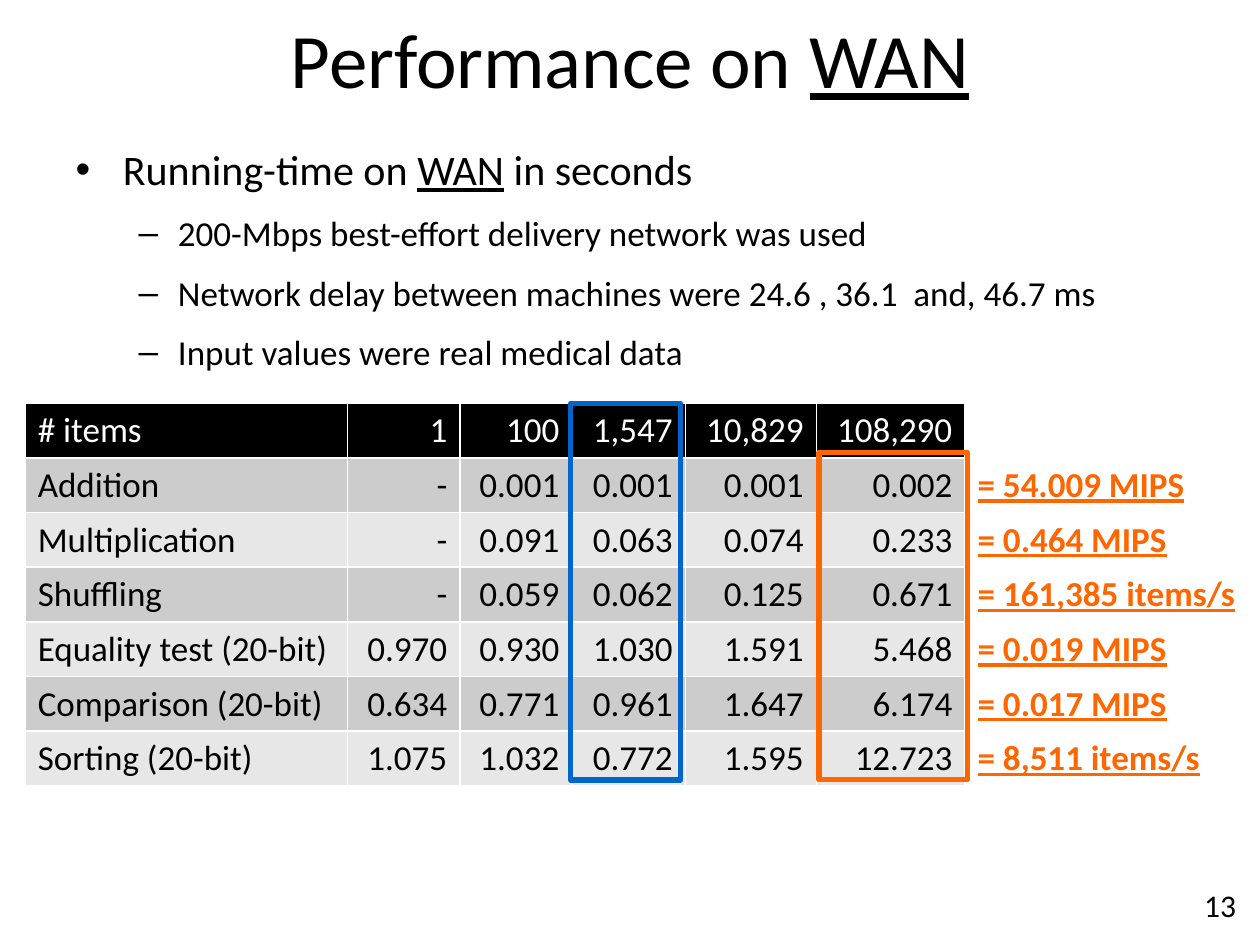
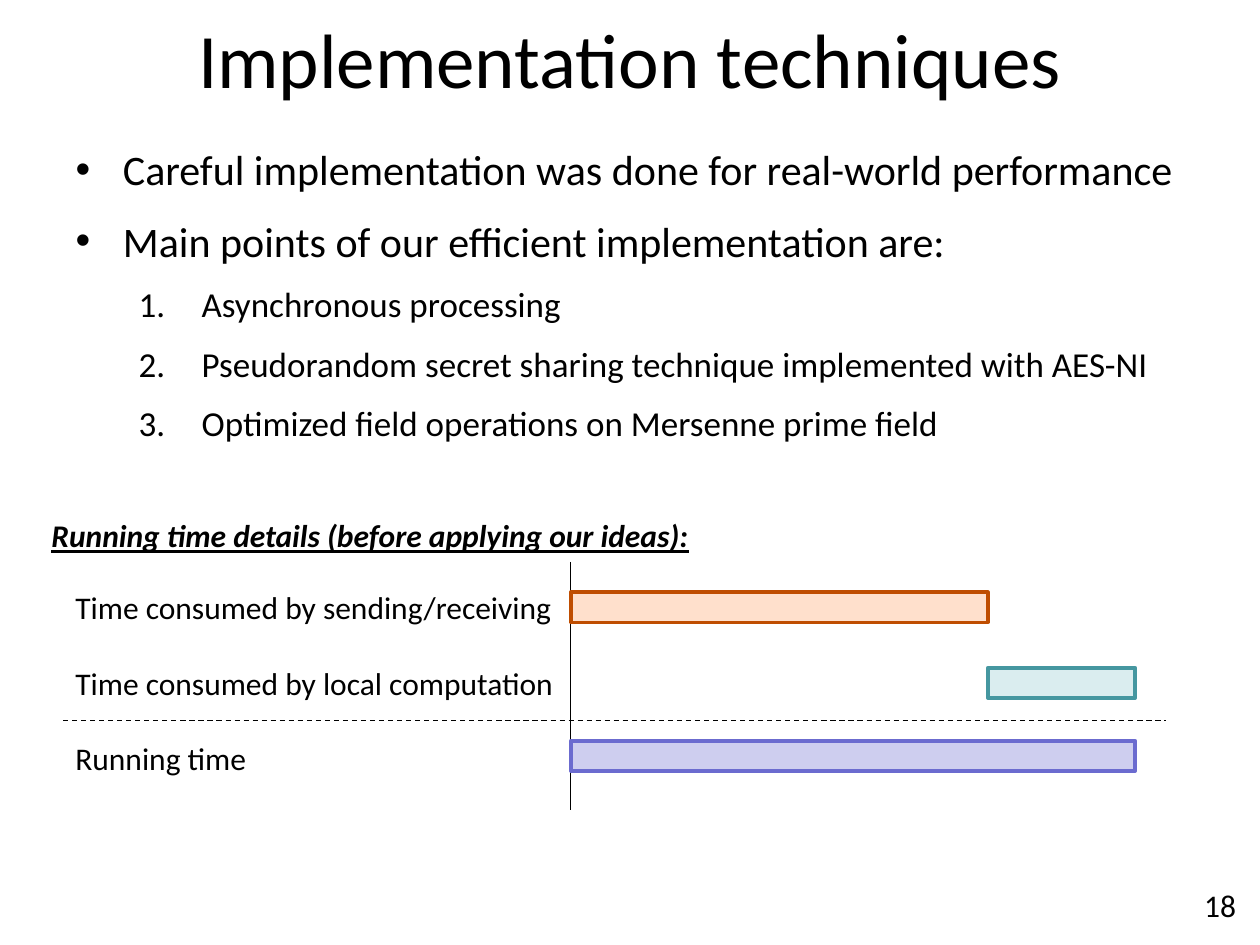
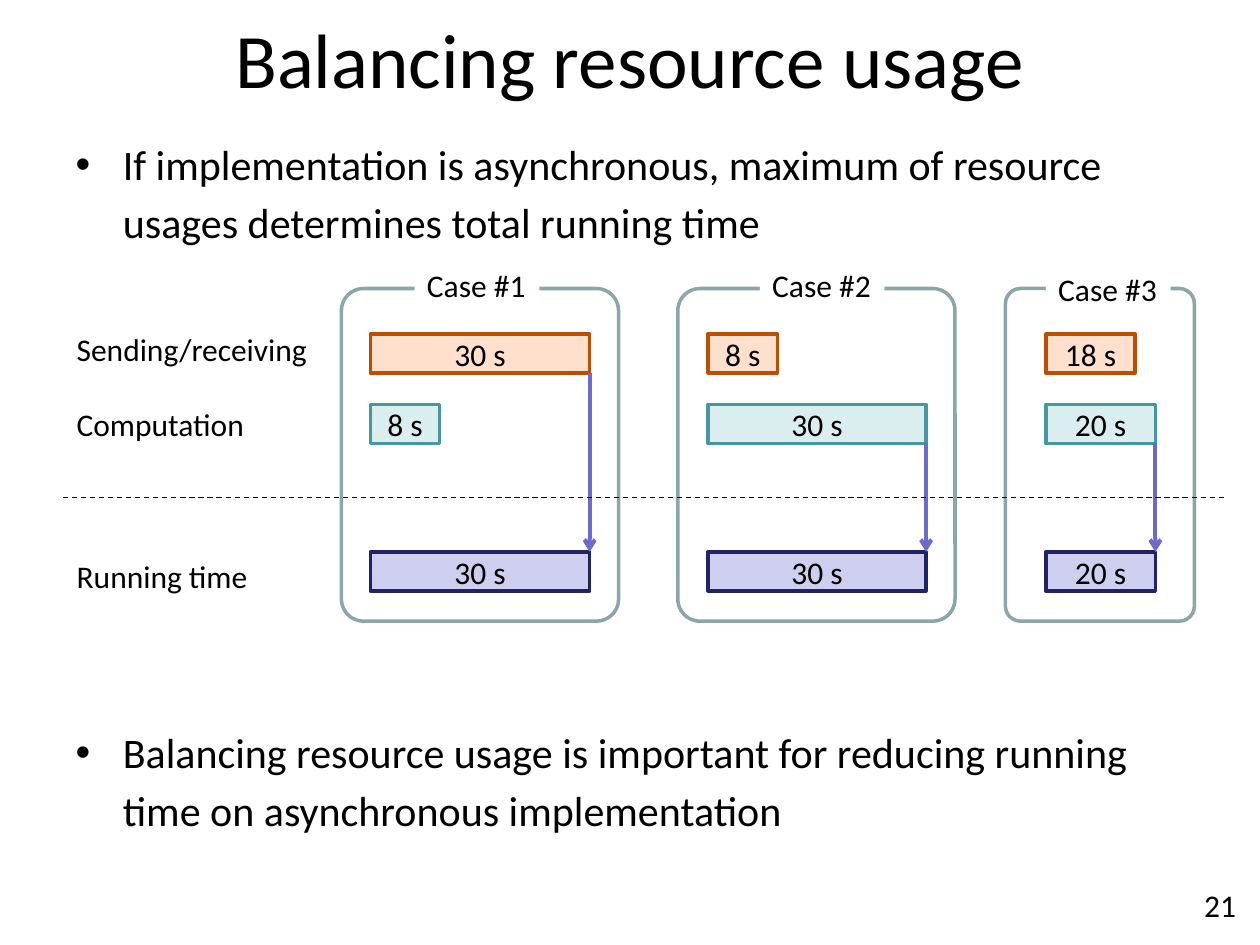
import dataclasses

import lxml.etree
import pptx
import pptx.dml.color
import pptx.enum.dml
import pptx.enum.shapes
import pptx.enum.text
import pptx.oxml.ns
import pptx.util

RGB = pptx.dml.color.RGBColor
SHAPE = pptx.enum.shapes.MSO_SHAPE
ALIGN = pptx.enum.text.PP_ALIGN
ANCHOR = pptx.enum.text.MSO_ANCHOR

BLACK = RGB(0x00, 0x00, 0x00)
WHITE = RGB(0xFF, 0xFF, 0xFF)
BAND_DARK = RGB(0xCC, 0xCC, 0xCC)
BAND_LIGHT = RGB(0xE7, 0xE7, 0xE7)
ORANGE = RGB(0xFF, 0x66, 0x00)
BLUE = RGB(0x00, 0x66, 0xCC)
NETWORK = RGB(0xFF, 0xE0, 0xCC)
NETWORK_EDGE = RGB(0xBF, 0x4D, 0x00)
COMPUTE = RGB(0xDA, 0xED, 0xEF)
COMPUTE_EDGE = RGB(0x45, 0x97, 0xA0)
TOTAL = RGB(0xCE, 0xCE, 0xEF)
TOTAL_EDGE = RGB(0x6B, 0x6B, 0xCF)
TOTAL_EDGE_DARK = RGB(0x22, 0x22, 0x67)
FRAME = RGB(0x8A, 0xA6, 0xA8)

FONT = "Calibri"
TITLE_SIZE, LABEL_SIZE, TABLE_SIZE = 44, 18, 20
LEVEL_SIZES = (24, 20)
EMPHASIS = {"bold": True, "underline": True}

SLIDE_W, SLIDE_H = pptx.util.Inches(10), pptx.util.Inches(7.5)
GRID_COLUMNS, GRID_ROWS = 100, 75


def across(columns):
    return round(SLIDE_W * columns / GRID_COLUMNS)


def down(rows):
    return round(SLIDE_H * rows / GRID_ROWS)


@dataclasses.dataclass
class Box:
    """A region in grid columns and rows."""
    left: float
    top: float
    width: float
    height: float

    def area(self, left, top, width, height):
        return Box(self.left + left, self.top + top, width, height)

    def lengths(self):
        return across(self.left), down(self.top), across(self.width), down(self.height)


SLIDE = Box(0, 0, GRID_COLUMNS, GRID_ROWS)
TITLE_BOX = SLIDE.area(0, 0, 100, 9.2)
BODY_BOX = SLIDE.area(5, 9.9, 90, 59.1)
NUMBER_BOX = SLIDE.area(94.1, 69.8, 5, 4)


def set_format(target, values):
    for name, value in values.items():
        setattr(target, name, value)


def add_run(paragraph, text, size, color=BLACK, **style):
    run = paragraph.add_run()
    run.text = text
    set_format(run.font, {"name": FONT, "size": pptx.util.Pt(size), **style})
    run.font.color.rgb = color


def add_label(slide, box, lines, gaps=(0,), align=ALIGN.LEFT, **style):
    """Unwrapped text, with one space before each line, in points."""
    label = slide.shapes.add_textbox(*box.lengths())
    label.text_frame.word_wrap = False
    for index, (line, gap) in enumerate(zip(lines, gaps)):
        paragraph = label.text_frame.paragraphs[0] if index == 0 else label.text_frame.add_paragraph()
        set_format(paragraph, {"alignment": align, "space_before": pptx.util.Pt(gap)})
        add_run(paragraph, line, LABEL_SIZE, **style)
    return label


def add_block(slide, box, fill=None, edge=None, edge_width=2, text=None, kind=SHAPE.RECTANGLE):
    block = slide.shapes.add_shape(kind, *box.lengths())
    block.shadow.inherit = False
    if fill is None:
        block.fill.background()
    else:
        block.fill.solid()
        block.fill.fore_color.rgb = fill
    if edge is None:
        block.line.fill.background()
    else:
        block.line.color.rgb = edge
        block.line.width = pptx.util.Pt(edge_width)
    if text:
        set_format(block.text_frame, {"word_wrap": False, "vertical_anchor": ANCHOR.MIDDLE})
        paragraph = block.text_frame.paragraphs[0]
        paragraph.alignment = ALIGN.CENTER
        add_run(paragraph, text, LABEL_SIZE)
    return block


def add_line(slide, box, color=BLACK, width=0.75, dashed=False, arrow=False):
    """A straight line from the top left to the bottom right of the box."""
    left, top, wide, high = box.lengths()
    line = slide.shapes.add_connector(
        pptx.enum.shapes.MSO_CONNECTOR.STRAIGHT, left, top, left + wide, top + high)
    line.line.color.rgb = color
    line.line.width = pptx.util.Pt(width)
    if dashed:
        line.line.dash_style = pptx.enum.dml.MSO_LINE.DASH
    properties = line._element.spPr
    if arrow:
        outline = properties.find(pptx.oxml.ns.qn("a:ln"))
        lxml.etree.SubElement(outline, pptx.oxml.ns.qn("a:tailEnd"), type="arrow")
    lxml.etree.SubElement(properties, pptx.oxml.ns.qn("a:effectLst"))


def place_layout(layout):
    for placeholder, box in zip(layout.placeholders, (TITLE_BOX, BODY_BOX)):
        names = ("left", "top", "width", "height")
        set_format(placeholder, dict(zip(names, box.lengths())))


def add_slide(deck, number, title):
    slide = deck.slides.add_slide(deck.slide_layouts[1])
    heading = slide.shapes.title.text_frame
    set_format(heading, {"auto_size": pptx.enum.text.MSO_AUTO_SIZE.NONE,
                         "vertical_anchor": ANCHOR.MIDDLE})
    heading.paragraphs[0].alignment = ALIGN.CENTER
    for text, style in title:
        add_run(heading.paragraphs[0], text, TITLE_SIZE, **style)
    add_label(slide, NUMBER_BOX, [str(number)], align=ALIGN.RIGHT)
    return slide


def number_paragraph(paragraph):
    properties = paragraph._p.get_or_add_pPr()
    properties.set("marL", str(across(10)))
    properties.set("indent", str(-across(5)))
    lxml.etree.SubElement(properties, pptx.oxml.ns.qn("a:buAutoNum"), type="arabicPeriod")


def fill_body(slide, items, line_spacing=1.25, numbered_level=None):
    """Each item is its level and its runs of (text, style)."""
    body = slide.placeholders[1].text_frame
    body.auto_size = pptx.enum.text.MSO_AUTO_SIZE.NONE
    for index, (level, runs) in enumerate(items):
        paragraph = body.paragraphs[0] if index == 0 else body.add_paragraph()
        set_format(paragraph, {"level": level, "line_spacing": line_spacing})
        if level == numbered_level:
            number_paragraph(paragraph)
        for text, style in runs:
            add_run(paragraph, text, LEVEL_SIZES[level], **style)
    return body


TIMINGS = [
    ("# items", "1", "100", "1,547", "10,829", "108,290", ""),
    ("Addition", "-", "0.001", "0.001", "0.001", "0.002", "= 54.009 MIPS"),
    ("Multiplication", "-", "0.091", "0.063", "0.074", "0.233", "= 0.464 MIPS"),
    ("Shuffling", "-", "0.059", "0.062", "0.125", "0.671", "= 161,385 items/s"),
    ("Equality test (20-bit)", "0.970", "0.930", "1.030", "1.591", "5.468", "= 0.019 MIPS"),
    ("Comparison (20-bit)", "0.634", "0.771", "0.961", "1.647", "6.174", "= 0.017 MIPS"),
    ("Sorting (20-bit)", "1.075", "1.032", "0.772", "1.595", "12.723", "= 8,511 items/s"),
]
TIMING_COLUMNS = (25.6, 8.9, 8.9, 9, 10.4, 11.8, 23)


def add_timings(slide, box):
    table = slide.shapes.add_table(len(TIMINGS), len(TIMING_COLUMNS), *box.lengths()).table
    for column, width in zip(table.columns, TIMING_COLUMNS):
        column.width = across(width)
    rate_column = len(TIMING_COLUMNS) - 1
    for row, values in enumerate(TIMINGS):
        band = BLACK if row == 0 else (BAND_LIGHT, BAND_DARK)[row % 2]
        for column, value in enumerate(values):
            cell = table.cell(row, column)
            is_rate = column == rate_column
            if is_rate:
                cell.fill.background()
            else:
                cell.fill.solid()
                cell.fill.fore_color.rgb = band
            if not value:
                continue
            paragraph = cell.text_frame.paragraphs[0]
            paragraph.alignment = ALIGN.RIGHT if 0 < column < rate_column else ALIGN.LEFT
            color = ORANGE if is_rate else WHITE if row == 0 else BLACK
            add_run(paragraph, value, TABLE_SIZE, color, **(EMPHASIS if is_rate else {"bold": False}))
    add_block(slide, box.area(63, 3.9, 11.8, 26), edge=ORANGE, edge_width=3)
    add_block(slide, box.area(43.3, 0, 8.7, 29.9), edge=BLUE, edge_width=3)


def build_performance(deck):
    underlined = {"underline": True}
    slide = add_slide(deck, 13, [("Performance on ", {}), ("WAN", underlined)])
    fill_body(slide, [
        (0, [("Running-time on ", {}), ("WAN", underlined), (" in seconds", {})]),
        (1, [("200-Mbps best-effort delivery network was used", {})]),
        (1, [("Network delay between machines were 24.6 , 36.1  and, 46.7 ms", {})]),
        (1, [("Input values were real medical data", {})]),
    ])
    add_timings(slide, SLIDE.area(2, 32, sum(TIMING_COLUMNS), 30.3))


def add_time_details(slide, box):
    add_label(slide, box.area(1.9, 5.7, 40.3, 16.2),
              ["Time consumed by sending/receiving", "Time consumed by local computation",
               "Running time"], gaps=(0, 21.5, 21.5))
    axis, sending, computing = 42.2, 33.1, 11.7
    add_line(slide, box.area(axis, 4.1, 0, 19.7))
    for left, top, width, fill, edge in (
            (axis, 6.5, sending, NETWORK, NETWORK_EDGE),
            (axis + sending, 12.5, computing, COMPUTE, COMPUTE_EDGE),
            (axis, 18.3, sending + computing, TOTAL, TOTAL_EDGE)):
        add_block(slide, box.area(left, top, width, 2.4), fill, edge)
    add_label(slide, box.area(0, 0, 52.8, 4),
              ["Running time details (before applying our ideas):"], italic=True, **EMPHASIS)
    add_line(slide, box.area(1.9, 16.7, 87.5, 0), dashed=True)


def build_techniques(deck):
    slide = add_slide(deck, 18, [("Implementation techniques", {})])
    fill_body(slide, [
        (0, [("Careful implementation was done for real-world performance", {})]),
        (0, [("Main points of our efficient implementation are:", {})]),
        (1, [("Asynchronous processing", {})]),
        (1, [("Pseudorandom secret sharing technique implemented with AES-NI", {})]),
        (1, [("Optimized field operations on Mersenne prime field", {})]),
    ], numbered_level=1)
    add_time_details(slide, SLIDE.area(3.1, 40.5, 89.4, 23.8))


@dataclasses.dataclass
class Case:
    """Seconds and bar widths are for sending, then for computation."""
    name: str
    left: float
    width: float
    bars_left: float
    seconds: tuple
    bar_widths: tuple
    name_left: float
    name_top: float


CASES = [
    Case("Case #1", 22.1, 22, 2.3, (30, 8), (17.4, 5.5), 5.8, -2.3),
    Case("Case #2", 48.8, 22, 2.4, (8, 30), (5.5, 17.3), 6.5, -2.3),
    Case("Case #3", 74.8, 15, 3.2, (18, 20), (7.1, 8.7), 3.2, -2),
]
BAR_HEIGHT, TOTAL_TOP = 3.1, 20.9
RESOURCES = [(3.6, NETWORK, NETWORK_EDGE), (9.2, COMPUTE, COMPUTE_EDGE)]


def add_case(slide, box, case):
    for (top, fill, edge), seconds, width in zip(RESOURCES, case.seconds, case.bar_widths):
        add_block(slide, box.area(case.bars_left, top, width, BAR_HEIGHT), fill, edge,
                  text=f"{seconds} s")
    longest = max(case.seconds)
    slowest = case.seconds.index(longest)
    width = case.bar_widths[slowest]
    add_block(slide, box.area(case.bars_left, TOTAL_TOP, width, BAR_HEIGHT), TOTAL,
              TOTAL_EDGE_DARK, text=f"{longest} s")
    arrow_top = RESOURCES[slowest][0] + BAR_HEIGHT
    add_line(slide, box.area(case.bars_left + width, arrow_top, 0, TOTAL_TOP - arrow_top),
             TOTAL_EDGE, 2.25, arrow=True)
    frame = add_block(slide, box, edge=FRAME, kind=SHAPE.ROUNDED_RECTANGLE)
    frame.adjustments[0] = 0.08
    name = add_label(slide, box.area(case.name_left, case.name_top, 9.9, 4), [case.name])
    name.fill.solid()
    name.fill.fore_color.rgb = WHITE


def add_cases(slide, box):
    add_label(slide, box.area(0.1, 2.8, 20.8, 22.2),
              ["Sending/receiving", "Computation", "Running time"], gaps=(0, 21.5, 65))
    for case in CASES:
        add_case(slide, box.area(case.left, 0, case.width, box.height), case)
    add_line(slide, box.area(0, 16.6, box.width, 0), dashed=True)


def build_balancing(deck):
    slide = add_slide(deck, 21, [("Balancing resource usage", {})])
    body = fill_body(slide, [
        (0, [("If implementation is asynchronous, maximum of resource usages "
              "determines total running time", {})]),
        (0, [("Balancing resource usage is important for reducing running time "
              "on asynchronous implementation", {})]),
    ], line_spacing=1.15)
    body.paragraphs[1].space_before = pptx.util.Pt(270)
    add_cases(slide, SLIDE.area(5, 22.9, 92.2, 26.4))


def main():
    deck = pptx.Presentation()
    deck.slide_width, deck.slide_height = SLIDE_W, SLIDE_H
    place_layout(deck.slide_layouts[1])
    build_performance(deck)
    build_techniques(deck)
    build_balancing(deck)
    deck.save("out.pptx")


if __name__ == "__main__":
    main()
